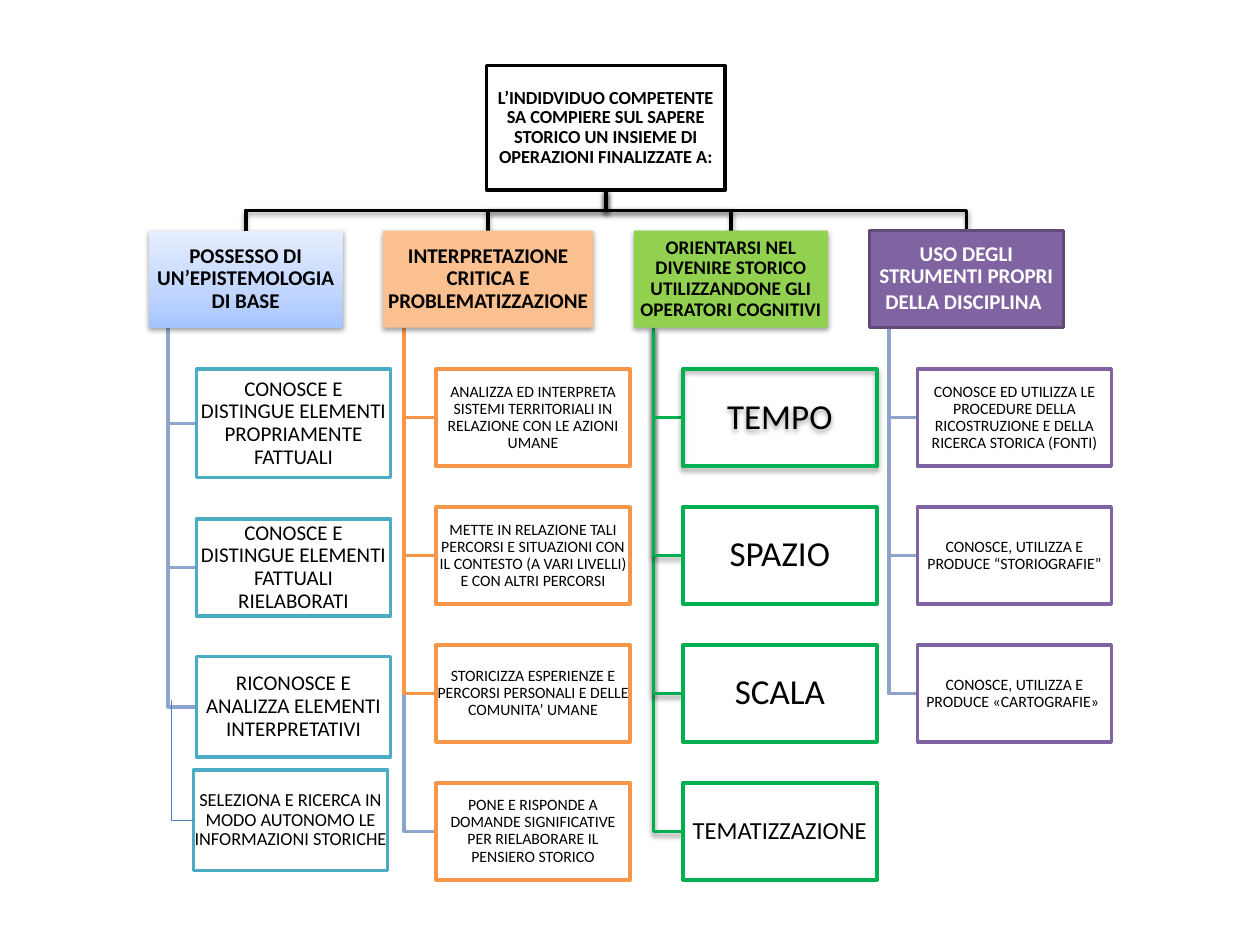
"""Build a concept map of historical competence with four branches."""
import copy
from dataclasses import dataclass
from typing import Optional

import pptx
import pptx.dml.color
import pptx.enum.shapes
import pptx.enum.text
import pptx.oxml
import pptx.oxml.ns
import pptx.util

Pt = pptx.util.Pt
ROOT_X, ROOT_BOTTOM, BUS_Y = 346.3, 108.7, 120.2
HEAD_TOP, BOX_W, BOX_H = 131.8, 110.9, 55.4
ROW_TOP, ROW_STEP = 211, 78.8
BLACK, WHITE, BLUE, ORANGE, GREEN = "000000", "FFFFFF", "8DA5CC", "F79646", "00B050"
TEAL, PURPLE = "4BACC6", "8064A2"
GRADIENT = ((0, "A5C4FF"), (0.35, "C0D5FF"), (1, "E7EFFF"))


@dataclass
class Box:
    text: str
    size: float
    fill: Optional[str] = WHITE
    line: Optional[str] = None
    color: str = BLACK
    bold: bool = False
    shadow: bool = False
    tail_size: float = 0


@dataclass
class Item:
    box: Box
    top: float
    height: float = BOX_H
    spine: str = BLUE
    spine_shadow: bool = False


@dataclass
class Branch:
    left: float
    width: float
    items_left: float
    head: Box
    items: list[Item]


def rgb(color: str) -> pptx.dml.color.RGBColor:
    """Turn a hex string into a colour."""
    return pptx.dml.color.RGBColor.from_string(color)


def set_shadow(sp, on: bool) -> None:
    """Drop the theme shadow and add a soft one below if wanted."""
    sp.shadow.inherit = False
    if on:
        effects = sp._element.spPr.find(pptx.oxml.ns.qn("a:effectLst"))
        effects.append(pptx.oxml.parse_xml(
            f'<a:outerShdw {pptx.oxml.ns.nsdecls("a")} blurRad="{Pt(3.1)}" dist="{Pt(1.6)}" '
            'dir="5400000" rotWithShape="0"><a:srgbClr val="000000">'
            '<a:alpha val="38000"/></a:srgbClr></a:outerShdw>'))


def set_gradient(sp) -> None:
    """Fill a shape with the three-stop blue gradient."""
    sp.fill.gradient()
    stops = sp._element.spPr.find(".//" + pptx.oxml.ns.qn("a:gsLst"))
    stops.append(copy.deepcopy(stops[-1]))
    sp.fill.gradient_angle = 90
    for stop, (position, color) in zip(sp.fill.gradient_stops, GRADIENT):
        stop.position = position
        stop.color.rgb = rgb(color)


def add_box(s, box: Box, x: float, y: float, w: float, h: float):
    """Draw a rectangle with centred text."""
    sp = s.shapes.add_shape(pptx.enum.shapes.MSO_SHAPE.RECTANGLE, Pt(x), Pt(y), Pt(w), Pt(h))
    set_shadow(sp, box.shadow)
    if box.fill == "gradient":
        set_gradient(sp)
    elif box.fill:
        sp.fill.solid()
        sp.fill.fore_color.rgb = rgb(box.fill)
    else:
        sp.fill.background()
    if box.line:
        sp.line.color.rgb = rgb(box.line)
        sp.line.width = Pt(2)
    else:
        sp.line.fill.background()
    tf = sp.text_frame
    tf.word_wrap = True
    tf.vertical_anchor = pptx.enum.text.MSO_ANCHOR.MIDDLE
    tf.margin_left = tf.margin_right = tf.margin_top = tf.margin_bottom = Pt(0.6)
    p = tf.paragraphs[0]
    p.alignment = pptx.enum.text.PP_ALIGN.CENTER
    p.line_spacing = 0.9
    p.font.name, p.font.size, p.font.bold = "Calibri", Pt(box.size), box.bold
    p.font.color.rgb = rgb(box.color)
    p.add_run().text = box.text
    if box.tail_size:
        r = p.add_run()
        r.text = " "
        r.font.size = Pt(box.tail_size)
    return sp


def add_elbow(s, points: list[tuple[float, float]], color: str, shadow: bool) -> None:
    """Draw an open line through the points."""
    start, *rest = [(Pt(x), Pt(y)) for x, y in points]
    builder = s.shapes.build_freeform(*start)
    builder.add_line_segments(rest, close=False)
    sp = builder.convert_to_shape()
    sp.fill.background()
    sp.line.color.rgb = rgb(color)
    sp.line.width = Pt(2)
    set_shadow(sp, shadow)


def add_line(s, x1: float, y1: float, x2: float, y2: float):
    """Draw a thin straight connector."""
    cn = s.shapes.add_connector(
        pptx.enum.shapes.MSO_CONNECTOR.STRAIGHT, Pt(x1), Pt(y1), Pt(x2), Pt(y2))
    cn.line.color.rgb = rgb("4B7EBC")
    cn.line.width = Pt(0.75)
    cn._element.spPr.append(pptx.oxml.parse_xml(f'<a:effectLst {pptx.oxml.ns.nsdecls("a")}/>'))
    return cn


def add_lines(s, branch: Branch) -> None:
    """Draw the lines from the root to a branch and on to its items."""
    spine_x = branch.left + branch.width / 10
    for item in reversed(branch.items):
        y = item.top + item.height / 2
        add_elbow(s, [(spine_x, HEAD_TOP + BOX_H), (spine_x, y), (branch.items_left, y)],
                  item.spine, item.spine_shadow)
    x = branch.left + branch.width / 2
    add_elbow(s, [(ROOT_X, ROOT_BOTTOM), (ROOT_X, BUS_Y), (x, BUS_Y), (x, HEAD_TOP)], BLACK, True)


def add_boxes(s, branch: Branch) -> None:
    """Draw the head and the items of a branch."""
    add_box(s, branch.head, branch.left, HEAD_TOP, branch.width, BOX_H)
    for item in branch.items:
        add_box(s, item.box, branch.items_left, item.top, BOX_W, item.height)


def rows(texts: list[str], size: float, line: str, spine: str) -> list[Item]:
    """Lay out evenly spaced items of one style."""
    return [Item(Box(text, size, line=line), ROW_TOP + i * ROW_STEP, spine=spine)
            for i, text in enumerate(texts)]


def main() -> None:
    """Compose the slide and save it."""
    basics = [
        Item(Box("CONOSCE E DISTINGUE ELEMENTI PROPRIAMENTE FATTUALI", 12, line=TEAL), 211, 61.9),
        Item(Box("CONOSCE E DISTINGUE ELEMENTI FATTUALI RIELABORATI", 12, line=TEAL), 296.6),
        Item(Box("RICONOSCE E ANALIZZA ELEMENTI INTERPRETATIVI", 12, line=TEAL), 375.1, 57.6)]
    criticism = rows([
        "ANALIZZA ED INTERPRETA SISTEMI TERRITORIALI IN RELAZIONE CON LE AZIONI UMANE",
        "METTE IN RELAZIONE TALI PERCORSI E SITUAZIONI CON IL CONTESTO (A VARI LIVELLI) "
        "E CON ALTRI PERCORSI",
        "STORICIZZA ESPERIENZE E PERCORSI PERSONALI E DELLE COMUNITA’ UMANE",
        "PONE E RISPONDE A DOMANDE SIGNIFICATIVE PER RIELABORARE IL PENSIERO STORICO",
    ], 9, ORANGE, ORANGE)
    criticism[-1].spine = BLUE
    operators = rows(["TEMPO", "SPAZIO", "SCALA", "TEMATIZZAZIONE"], 20, GREEN, GREEN)
    operators[0].box.fill, operators[0].box.shadow = None, True
    operators[-1].box.size = 14
    for item in operators[1:]:
        item.spine_shadow = True
    tools = rows([
        "CONOSCE ED UTILIZZA LE PROCEDURE DELLA RICOSTRUZIONE E DELLA RICERCA STORICA (FONTI)",
        "CONOSCE, UTILIZZA E PRODUCE “STORIOGRAFIE”",
        "CONOSCE, UTILIZZA E PRODUCE «CARTOGRAFIE» ",
    ], 9, PURPLE, BLUE)
    branches = [
        Branch(85, BOX_W, 112.3, Box("POSSESSO DI UN’EPISTEMOLOGIA DI BASE", 12, "gradient",
                                     bold=True, shadow=True), basics),
        Branch(218.9, 120.2, 249.1, Box("INTERPRETAZIONE CRITICA E PROBLEMATIZZAZIONE", 12,
                                        "FAC090", bold=True, shadow=True), criticism),
        Branch(362.2, BOX_W, 390.2, Box(
            "ORIENTARSI NEL DIVENIRE STORICO UTILIZZANDONE GLI OPERATORI COGNITIVI", 11,
            "92D050", bold=True, shadow=True), operators),
        Branch(496.8, BOX_W, 524.2, Box("USO DEGLI STRUMENTI PROPRI DELLA DISCIPLINA", 12, PURPLE,
                                        "5F4A78", WHITE, True, tail_size=14), tools)]

    prs = pptx.Presentation()
    prs.slide_width, prs.slide_height = Pt(720), Pt(540)
    s = prs.slides.add_slide(prs.slide_layouts[6])
    for branch in reversed(branches):
        add_lines(s, branch)
    add_box(s, Box("L’INDIDVIDUO COMPETENTE SA COMPIERE SUL SAPERE STORICO UN INSIEME DI "
                   "OPERAZIONI FINALIZZATE A:", 10.5, line=BLACK, bold=True),
            278, 37.4, 136.4, 71.3)
    for branch in branches:
        add_boxes(s, branch)
    research = add_box(s, Box("SELEZIONA E RICERCA IN MODO AUTONOMO LE INFORMAZIONI STORICHE",
                              10.5, line=TEAL), 110.6, 439.9, BOX_W, 57.6)
    add_line(s, 97.9, 400.3, 97.9, 468.7)
    add_line(s, 97.9, 468.7, 110.6, 468.7).end_connect(research, 1)
    prs.save("out.pptx")


if __name__ == "__main__":
    main()
